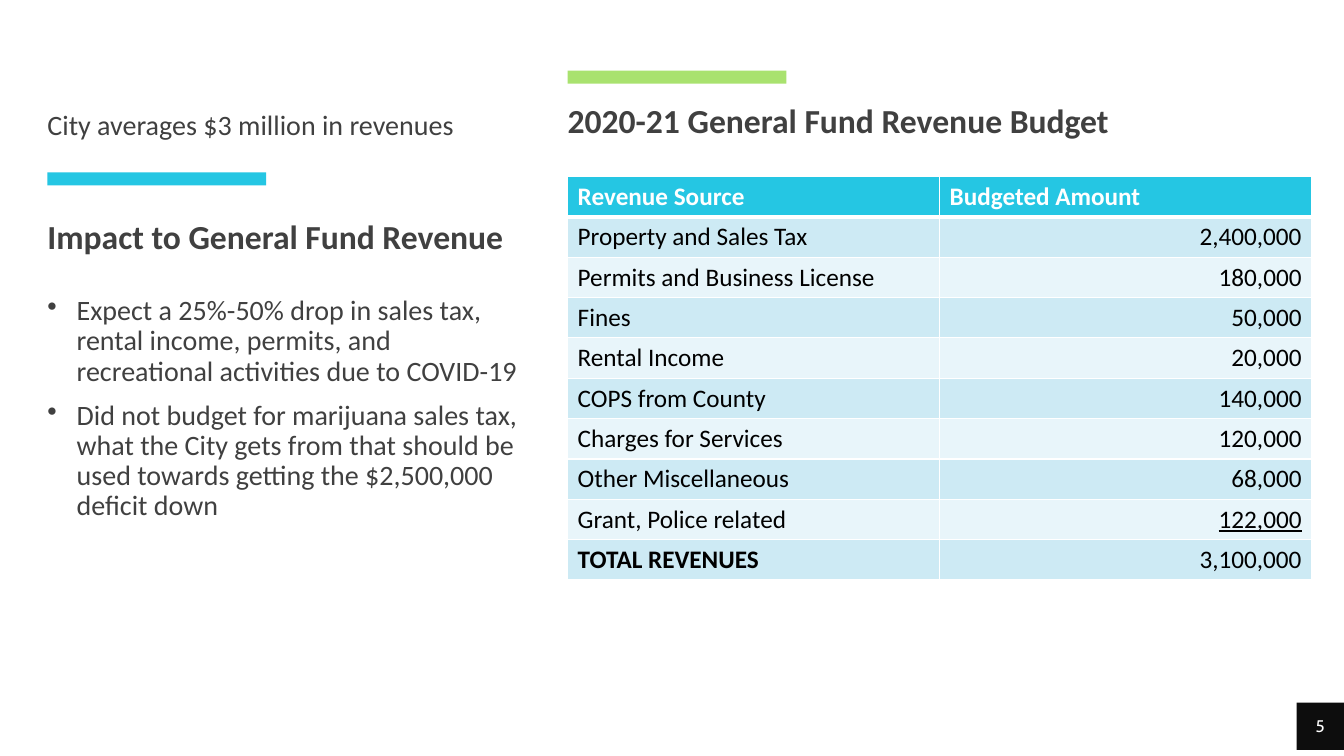
import pptx
import pptx.dml.color
import pptx.enum.shapes
import pptx.enum.text
import pptx.oxml.ns
import pptx.util
import lxml.etree

Inches = pptx.util.Inches
Pt = pptx.util.Pt
RGBColor = pptx.dml.color.RGBColor
ALIGN = pptx.enum.text.PP_ALIGN
MIDDLE = pptx.enum.text.MSO_ANCHOR.MIDDLE

WHITE = RGBColor(0xFF, 0xFF, 0xFF)
BLACK = RGBColor(0, 0, 0)
GRAY = RGBColor(0x40, 0x40, 0x40)
DARK = RGBColor(0x0D, 0x0D, 0x0D)
CYAN = RGBColor(0x25, 0xC6, 0xE3)
GREEN = RGBColor(0xA9, 0xE2, 0x6F)
BANDS = (RGBColor(0xE8, 0xF5, 0xFA), RGBColor(0xCD, 0xEA, 0xF4))

HEADER = ("Revenue Source", "Budgeted Amount")
BUDGET = (
    ("Property and Sales Tax", "2,400,000"),
    ("Permits and Business License", "180,000"),
    ("Fines", "50,000"),
    ("Rental Income", "20,000"),
    ("COPS from County", "140,000"),
    ("Charges for Services", "120,000"),
    ("Other Miscellaneous", "68,000"),
    ("Grant, Police related", "122,000"),
    ("TOTAL REVENUES", "3,100,000"),
)
IMPACTS = (
    "Expect a 25%-50% drop in sales tax, rental income, permits, and "
    "recreational activities due to COVID-19",
    "Did not budget for marijuana sales tax, what the City gets from that "
    "should be used towards getting the $2,500,000 deficit down",
)


def style(para, size, color, bold=False, face="Calibri"):
    """Set the font of a paragraph."""
    font = para.font
    font.name, font.size, font.bold = face, Pt(size), bold
    font.color.rgb = color


def clear(frame):
    """Wrap a text frame and remove its insets."""
    frame.word_wrap = True
    frame.margin_left = frame.margin_right = 0
    frame.margin_top = frame.margin_bottom = 0


def add_child(parent, tag, **attrs):
    """Append a DrawingML element and return it."""
    return lxml.etree.SubElement(parent, pptx.oxml.ns.qn(tag), attrs)


def add_text(slide, left, top, width, height, lines, size, bold=False, bullet=False):
    """Add a text box with one paragraph a line."""
    box = slide.shapes.add_textbox(Inches(left), Inches(top), Inches(width), Inches(height))
    frame = box.text_frame
    clear(frame)
    for i, line in enumerate(lines):
        para = frame.add_paragraph() if i else frame.paragraphs[0]
        para.text = line
        if bullet:
            props = para._p.get_or_add_pPr()
            indent = Inches(0.29)
            props.set("marL", str(indent))
            props.set("indent", str(-indent))
            add_child(props, "a:buChar", char="•")
        para.line_spacing = 0.9
        para.space_before = Pt(10)
        style(para, size, GRAY, bold)


def add_block(slide, left, top, width, height, color):
    """Add a plain filled rectangle."""
    kind = pptx.enum.shapes.MSO_SHAPE.RECTANGLE
    block = slide.shapes.add_shape(kind, Inches(left), Inches(top), Inches(width), Inches(height))
    block.shadow.inherit = False
    block.fill.solid()
    block.fill.fore_color.rgb = color
    block.line.fill.background()
    return block


def add_edges(cell, row):
    """Draw white cell borders, thick below the header."""
    props = cell._tc.get_or_add_tcPr()
    for side in "LRTB":
        thick = (side, row) in (("B", 0), ("T", 1))
        edge = add_child(props, "a:ln" + side, w=str(Pt(3 if thick else 1)))
        add_child(add_child(edge, "a:solidFill"), "a:srgbClr", val=str(WHITE))


def add_budget(slide, left, top, width, height):
    """Add the revenue table."""
    rows = (HEADER,) + BUDGET
    last = len(rows) - 1
    table = slide.shapes.add_table(
        len(rows), 2, Inches(left), Inches(top), Inches(width), Inches(height)
    ).table
    for r, texts in enumerate(rows):
        for c, text in enumerate(texts):
            cell = table.cell(r, c)
            cell.text = text
            add_edges(cell, r)
            cell.fill.solid()
            cell.fill.fore_color.rgb = BANDS[r % 2] if r else CYAN
            para = cell.text_frame.paragraphs[0]
            para.alignment = ALIGN.RIGHT if r and c else ALIGN.LEFT
            style(para, 18, BLACK if r else WHITE, r == 0 or (r == last and c == 0))
            if r == last - 1 and c:
                para.runs[0].font.underline = True


def add_impact(slide, left, top, width):
    """Add the left column on the revenue impact."""
    add_text(slide, left, top, width, 0.39, ["City averages $3 million in revenues"], 20)
    add_block(slide, left, top + 0.61, 2.17, 0.13, CYAN)
    add_text(slide, left, top + 1.09, width, 0.39, ["Impact to General Fund Revenue"], 24, True)
    add_text(slide, left, top + 1.84, width, 2.74, IMPACTS, 20, bullet=True)


def add_revenue(slide, left, top, width):
    """Add the right column with the budget."""
    add_block(slide, left, top, 2.17, 0.13, GREEN)
    title = "2020-21 General Fund Revenue Budget"
    add_text(slide, left, top + 0.34, width, 0.39, [title], 24, True)
    add_budget(slide, left, top + 1.05, width, 4)


def add_number(slide, left, top, side):
    """Add the slide number square."""
    frame = add_block(slide, left, top, side, side, DARK).text_frame
    clear(frame)
    frame.vertical_anchor = MIDDLE
    para = frame.paragraphs[0]
    para.text = "5"
    para.alignment = ALIGN.CENTER
    style(para, 12, WHITE, face="Cabin")


def main():
    """Build and save the slide."""
    deck = pptx.Presentation()
    deck.slide_width, deck.slide_height = Inches(13.33), Inches(7.5)
    slide = deck.slides.add_slide(deck.slide_layouts[6])
    add_impact(slide, 0.47, 1.1, 4.78)
    add_revenue(slide, 5.63, 0.7, 7.38)
    add_number(slide, 12.86, 6.97, 0.47)
    deck.save("out.pptx")


if __name__ == "__main__":
    main()
